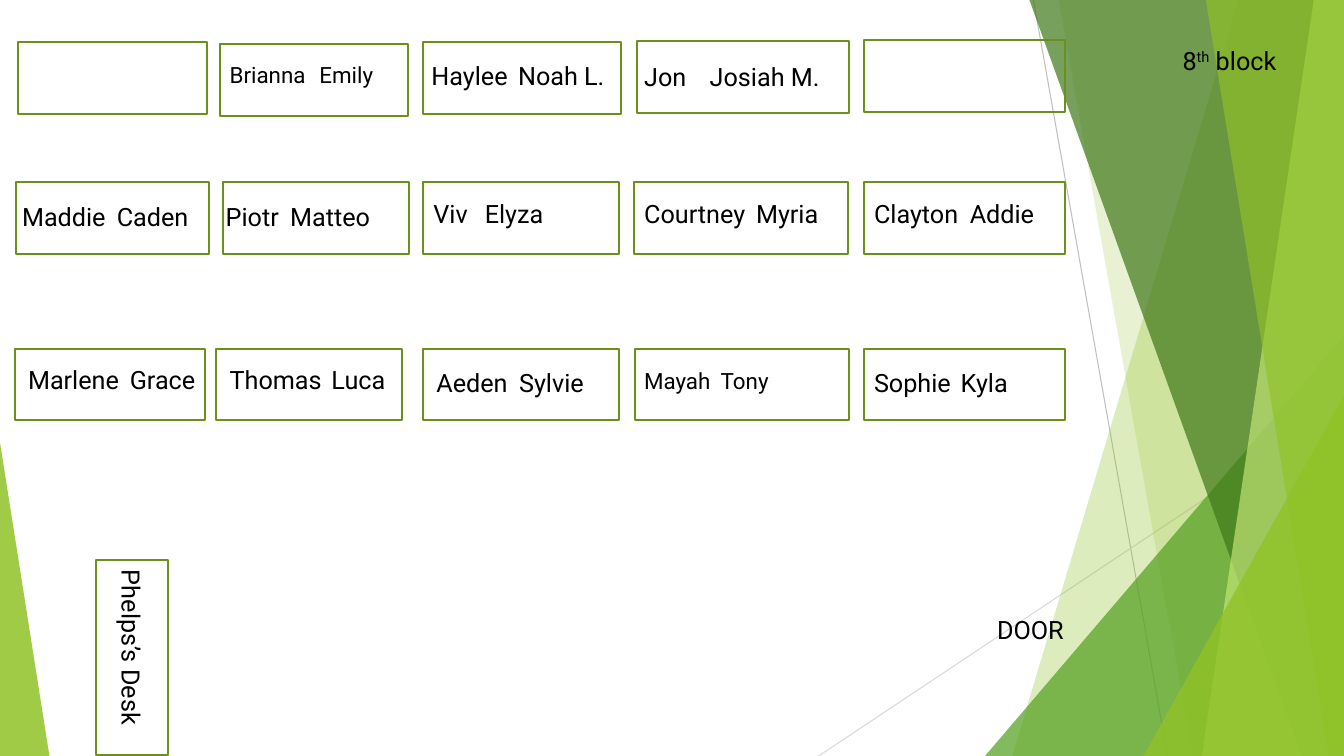
from collections import namedtuple
from dataclasses import dataclass

from lxml.etree import SubElement
from pptx import Presentation
from pptx.dml.color import RGBColor
from pptx.enum.shapes import MSO_CONNECTOR, MSO_SHAPE
from pptx.enum.text import MSO_AUTO_SIZE
from pptx.oxml.ns import qn
from pptx.util import Inches, Pt


@dataclass(frozen=True)
class Theme:
    font: str = "Roboto"
    text: str = "000000"
    desk_line: str = "6B901C"
    lime: str = "90C226"
    green: str = "54A021"
    forest: str = "3F7819"
    pale: str = "C0E474"
    steep_line: str = "BFBFBF"
    shallow_line: str = "D9D9D9"
    body: int = 18
    small: int = 16
    desk_weight: float = 1.5
    hairline: float = 0.75


THEME = Theme()
Box = namedtuple("Box", "left top width height")
Seat = namedtuple("Seat", "left width drop label_left label_drop label_width names tab size",
                  defaults=(None, None, None, (), 0, THEME.body))
Row = namedtuple("Row", "top seats")

DESK_HEIGHT = 0.71
LABEL_HEIGHT = 0.4

ROWS = [
    Row(0.4, [
        Seat(0.18, 1.87, 0.02),
        Seat(2.18, 1.87, 0.04, 2.18, 0.16, 1.99, ("Brianna", "Emily"), 0.89, THEME.small),
        Seat(4.2, 1.96, 0.02, 4.18, 0.15, 1.98, ("Haylee", "Noah L."), 0.86),
        Seat(6.32, 2.1, 0.01, 6.29, 0.16, 2.12, ("Jon", "Josiah M."), 0.65),
        Seat(8.57, 1.99, 0),
    ]),
    Row(1.81, [
        Seat(0.16, 1.91, 0, 0.12, 0.14, 1.95, ("Maddie", "Caden"), 0.94),
        Seat(2.21, 1.85, 0, 2.14, 0.14, 2.04, ("Piotr", "Matteo"), 0.64),
        Seat(4.2, 1.94, 0, 4.2, 0.11, 1.72, ("Viv", "Elyza"), 0.51),
        Seat(6.29, 2.12, 0, 6.29, 0.11, 1.99, ("Courtney", "Myria"), 1.11),
        Seat(8.57, 1.99, 0, 8.57, 0.11, 1.95, ("Clayton", "Addie"), 0.95),
    ]),
    Row(3.46, [
        Seat(0.15, 1.88, 0, 0.18, 0.11, 1.96, ("Marlene", "Grace"), 1.01),
        Seat(2.14, 1.85, 0, 2.18, 0.11, 1.87, ("Thomas", "Luca"), 1.01),
        Seat(4.2, 1.94, 0, 4.23, 0.13, 1.72, ("Aeden", "Sylvie"), 0.82),
        Seat(6.3, 2.12, 0, 6.29, 0.13, 2.15, ("Mayah", "Tony"), 0.76, THEME.small),
        Seat(8.57, 1.99, 0, 8.57, 0.13, 1.95, ("Sophie", "Kyla"), 0.86),
    ]),
]


def inches(*lengths):
    return [Inches(length) for length in lengths]


def paint(facet, color, opacity):
    facet.shadow.inherit = False
    facet.fill.solid()
    facet.fill.fore_color.rgb = RGBColor.from_string(color)
    tint = facet._element.spPr.find(".//" + qn("a:srgbClr"))
    SubElement(tint, qn("a:alpha")).set("val", str(opacity * 1000))
    facet.line.fill.background()


def add_hairline(slide, start, end, color):
    hairline = slide.shapes.add_connector(MSO_CONNECTOR.STRAIGHT, *inches(*start, *end))
    hairline.line.color.rgb = RGBColor.from_string(color)
    hairline.line.width = Pt(THEME.hairline)
    SubElement(hairline._element.spPr, qn("a:effectLst"))


def add_band(slide, box, top_x, bottom_x, color, opacity):
    right, bottom = box.left + box.width, box.top + box.height
    outline = slide.shapes.build_freeform(*inches(box.left + top_x, box.top), scale=1.0)
    corners = [(right, box.top), (right, bottom), (box.left + bottom_x, bottom)]
    outline.add_line_segments([inches(*corner) for corner in corners], close=True)
    paint(outline.convert_to_shape(), color, opacity)


def add_wedge(slide, box, peak, color, opacity):
    wedge = slide.shapes.add_shape(MSO_SHAPE.ISOSCELES_TRIANGLE, *inches(*box))
    wedge.adjustments[0] = peak
    paint(wedge, color, opacity)


def add_corner_wedge(slide, box, width, height, peak, color, opacity):
    left = box.left + (box.width - width) * peak
    top = box.top + box.height - height
    add_wedge(slide, Box(left, top, width, height), peak, color, opacity)


def add_facets(slide, box):
    right, bottom = box.left + box.width, box.top + box.height
    add_hairline(slide, (box.left + 10.25, box.top), (box.left + 11.58, bottom), THEME.steep_line)
    add_hairline(slide, (right, box.top + 4.03), (box.left + 8.12, bottom), THEME.shallow_line)
    add_band(slide, box, 12.28, 10.04, THEME.lime, 30)
    add_band(slide, box, 10.5, 11.83, THEME.lime, 20)
    add_corner_wedge(slide, box, 3.56, 4.17, 1, THEME.green, 72)
    add_band(slide, box, 10.21, 12.91, THEME.forest, 70)
    add_band(slide, box, 13.03, 11.92, THEME.pale, 70)
    add_band(slide, box, 11.96, 13.18, THEME.lime, 65)
    add_corner_wedge(slide, box, 1.99, 3.57, 1, THEME.lime, 80)
    add_corner_wedge(slide, box, 0.49, 3.11, 0, THEME.lime, 85)


def add_desk(slide, box, rotation=0):
    desk = slide.shapes.add_shape(MSO_SHAPE.RECTANGLE, *inches(*box))
    desk.shadow.inherit = False
    desk.fill.background()
    desk.line.color.rgb = RGBColor.from_string(THEME.desk_line)
    desk.line.width = Pt(THEME.desk_weight)
    desk.rotation = rotation


def add_label(slide, box, texts, size=THEME.body, rotation=0):
    label = slide.shapes.add_textbox(*inches(*box))
    label.rotation = rotation
    label.text_frame.word_wrap = True
    label.text_frame.auto_size = MSO_AUTO_SIZE.SHAPE_TO_FIT_TEXT
    paragraph = label.text_frame.paragraphs[0]
    for text in texts:
        run = paragraph.add_run()
        run.text = text
        run.font.name = THEME.font
        run.font.size = Pt(size)
        run.font.color.rgb = RGBColor.from_string(THEME.text)
    return paragraph


def add_seat_names(slide, box, seat):
    first, second = seat.names
    paragraph = add_label(slide, box, (first, "\t", second), seat.size)
    stops = SubElement(paragraph._p.get_or_add_pPr(), qn("a:tabLst"))
    stop = SubElement(stops, qn("a:tab"))
    stop.set("pos", str(Inches(seat.tab)))
    stop.set("algn", "l")


def add_seat_row(slide, box, seats):
    for seat in seats:
        add_desk(slide, Box(box.left + seat.left, box.top + seat.drop, seat.width, box.height))
        if seat.names:
            names_box = Box(box.left + seat.label_left, box.top + seat.label_drop,
                            seat.label_width, LABEL_HEIGHT)
            add_seat_names(slide, names_box, seat)


def add_teacher_desk(slide, box):
    add_desk(slide, box, rotation=90)
    name_box = Box(box.left - 0.04, box.top + 0.19, 2.01, LABEL_HEIGHT)
    add_label(slide, name_box, ("Phelps’s Desk",), rotation=90)


def add_block_title(slide, box):
    title = add_label(slide, box, ("8", "th", " block"))
    title.runs[1].font._element.set("baseline", "30000")


def add_seating_chart(slide, box):
    add_facets(slide, box)
    for row in ROWS:
        row_box = Box(box.left, box.top + row.top, box.width, DESK_HEIGHT)
        add_seat_row(slide, row_box, row.seats)
    add_teacher_desk(slide, Box(box.left + 0.34, box.top + 6.17, 1.94, DESK_HEIGHT))
    add_label(slide, Box(box.left + 9.79, box.top + 6.05, 2.01, LABEL_HEIGHT), ("DOOR",))
    add_block_title(slide, Box(box.left + 11.63, box.top + 0.4, 1.41, LABEL_HEIGHT))


def main():
    presentation = Presentation()
    page = Box(0, 0, 13.33, 7.5)
    presentation.slide_width, presentation.slide_height = inches(page.width, page.height)
    slide = presentation.slides.add_slide(presentation.slide_layouts[6])
    add_seating_chart(slide, page)
    presentation.save("out.pptx")


if __name__ == "__main__":
    main()
